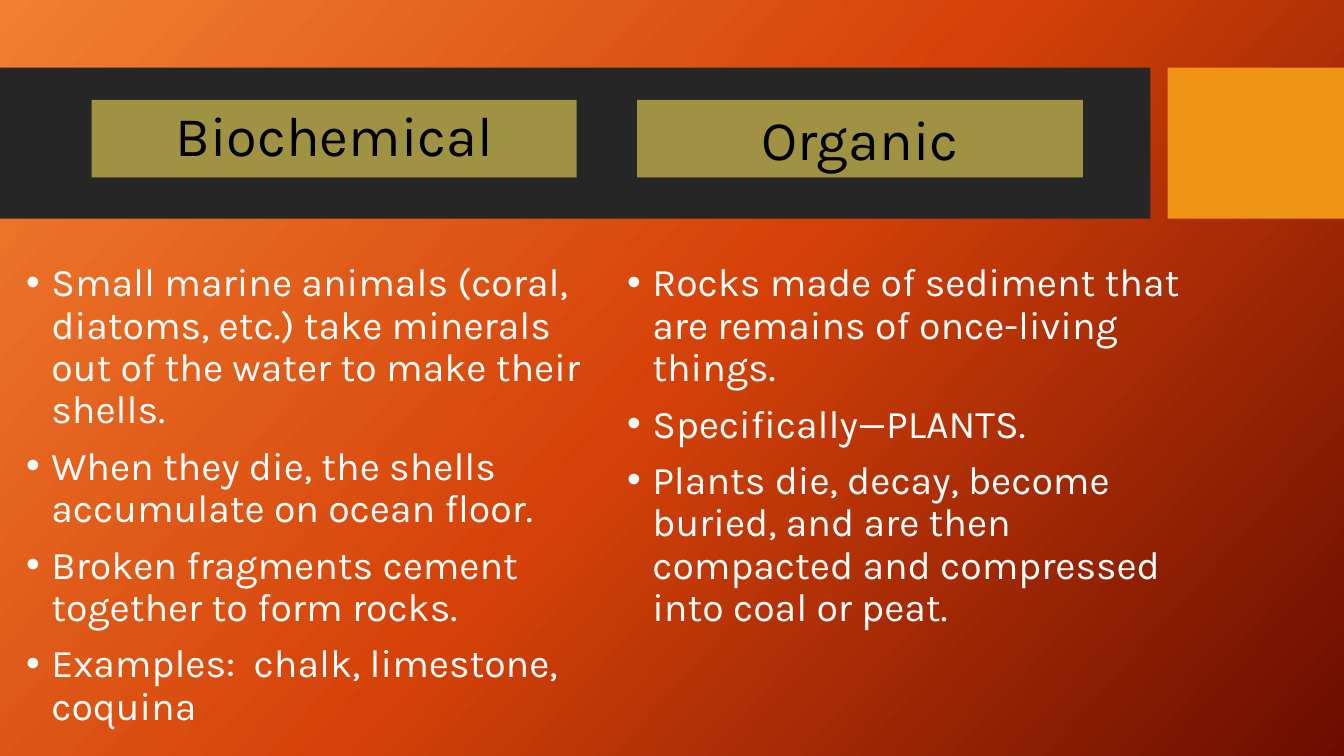
from copy import deepcopy

from pptx import Presentation
from pptx.dml.color import RGBColor
from pptx.enum import shapes, text
from pptx.oxml import parse_xml
from pptx.oxml.ns import nsdecls
from pptx.util import Inches, Pt

# Content
BIOCHEMICAL = "Biochemical"
ORGANIC = "Organic"
BIOCHEMICAL_POINTS = [
    "Small marine animals (coral, diatoms, etc.) take minerals out of the water to make their shells.",
    "When they die, the shells accumulate on ocean floor.",
    "Broken fragments cement together to form rocks.",
    "Examples:  chalk, limestone, coquina",
]
ORGANIC_POINTS = [
    "Rocks made of sediment that are remains of once-living things.",
    "Specifically—PLANTS.",
    "Plants die, decay, become buried, and are then compacted and compressed into coal or peat.",
]

# Look
FONT = "Karla"
COLORS = {"band": "262626", "accent": "F09415", "label": "9F9242",
          "heading": "000000", "body": "FFFFFF"}
BACKGROUND = [(0, "F18031"), (0.5, "D54209"), (1, "6A0D00")]
BACKGROUND_ANGLE = 42

# Layout in inches
WIDTH, HEIGHT = 13.33, 7.5
BAND_TOP, BAND_HEIGHT, BAND_WIDTH, ACCENT_LEFT = 0.67, 1.5, 11.41, 11.58
LABEL_TOP, LABEL_HEIGHT = 0.99, 0.77
POINTS_TOP = 2.56


def place(shape, left, top, width, height):
    shape.left, shape.top = Inches(left), Inches(top)
    shape.width, shape.height = Inches(width), Inches(height)


def paint(shape, color):
    shape.fill.solid()
    shape.fill.fore_color.rgb = RGBColor.from_string(COLORS[color])
    shape.line.fill.background()


def add_block(left, top, width, height, color):
    block = slide.shapes.add_shape(
        shapes.MSO_SHAPE.RECTANGLE, *map(Inches, (left, top, width, height)))
    block.shadow.inherit = False
    paint(block, color)
    return block


def write(shape, lines, size, color, align=text.PP_ALIGN.LEFT, spacing=0.9, gap=0,
          bullet=False, anchor=text.MSO_ANCHOR.TOP, fit=text.MSO_AUTO_SIZE.NONE):
    frame = shape.text_frame
    frame.word_wrap, frame.auto_size, frame.vertical_anchor = True, fit, anchor
    for i, line in enumerate(lines):
        paragraph = frame.add_paragraph() if i else frame.paragraphs[0]
        paragraph.add_run().text = line
        paragraph.alignment = align
        paragraph.line_spacing = spacing
        paragraph.space_before = Pt(gap if i else 0)
        if bullet:
            props = paragraph._p.get_or_add_pPr()
            props.set("marL", str(Inches(0.25)))
            props.set("indent", str(-Inches(0.25)))
            props.append(parse_xml(f'<a:buFont {nsdecls("a")} typeface="Arial"/>'))
            props.append(parse_xml(f'<a:buChar {nsdecls("a")} char="•"/>'))
        font = paragraph.runs[0].font
        font.name, font.size = FONT, Pt(size)
        font.color.rgb = RGBColor.from_string(COLORS[color])


prs = Presentation()
prs.slide_width, prs.slide_height = Inches(WIDTH), Inches(HEIGHT)
slide = prs.slides.add_slide(prs.slide_layouts[3])
title, left_points, right_points = slide.placeholders

# Gradient background; python-pptx angles run counter-clockwise
background = slide.background.fill
background.gradient()
background.gradient_angle = 360 - BACKGROUND_ANGLE
stop_list = slide.element.xpath(".//a:gsLst")[0]
stop_list.append(deepcopy(stop_list[-1]))
for stop, (position, color) in zip(background.gradient_stops, BACKGROUND):
    stop.position = position
    stop.color.rgb = RGBColor.from_string(color)

# Header band, placed behind the title
band = add_block(0, BAND_TOP, BAND_WIDTH, BAND_HEIGHT, "band")
accent = add_block(ACCENT_LEFT, BAND_TOP, WIDTH - ACCENT_LEFT, BAND_HEIGHT, "accent")
for block in (accent, band):
    title.element.addprevious(block.element)
accent.element.addprevious(band.element)

# Headings
place(title, 0.91, LABEL_TOP, 4.81, LABEL_HEIGHT)
paint(title, "label")
write(title, [BIOCHEMICAL], 40, "heading", align=text.PP_ALIGN.CENTER,
      anchor=text.MSO_ANCHOR.MIDDLE)
organic = add_block(6.32, LABEL_TOP, 4.42, LABEL_HEIGHT, "label")
write(organic, [ORGANIC], 40, "heading", align=text.PP_ALIGN.CENTER, spacing=1.0,
      fit=text.MSO_AUTO_SIZE.SHAPE_TO_FIT_TEXT)

# Bullet columns
for column, points, left, width, height in (
        (left_points, BIOCHEMICAL_POINTS, 0.16, 5.72, 4.94),
        (right_points, ORGANIC_POINTS, 6.12, 5.76, 3.94)):
    place(column, left, POINTS_TOP, width, height)
    write(column, points, 28, "body", gap=10, bullet=True)

prs.save("out.pptx")
